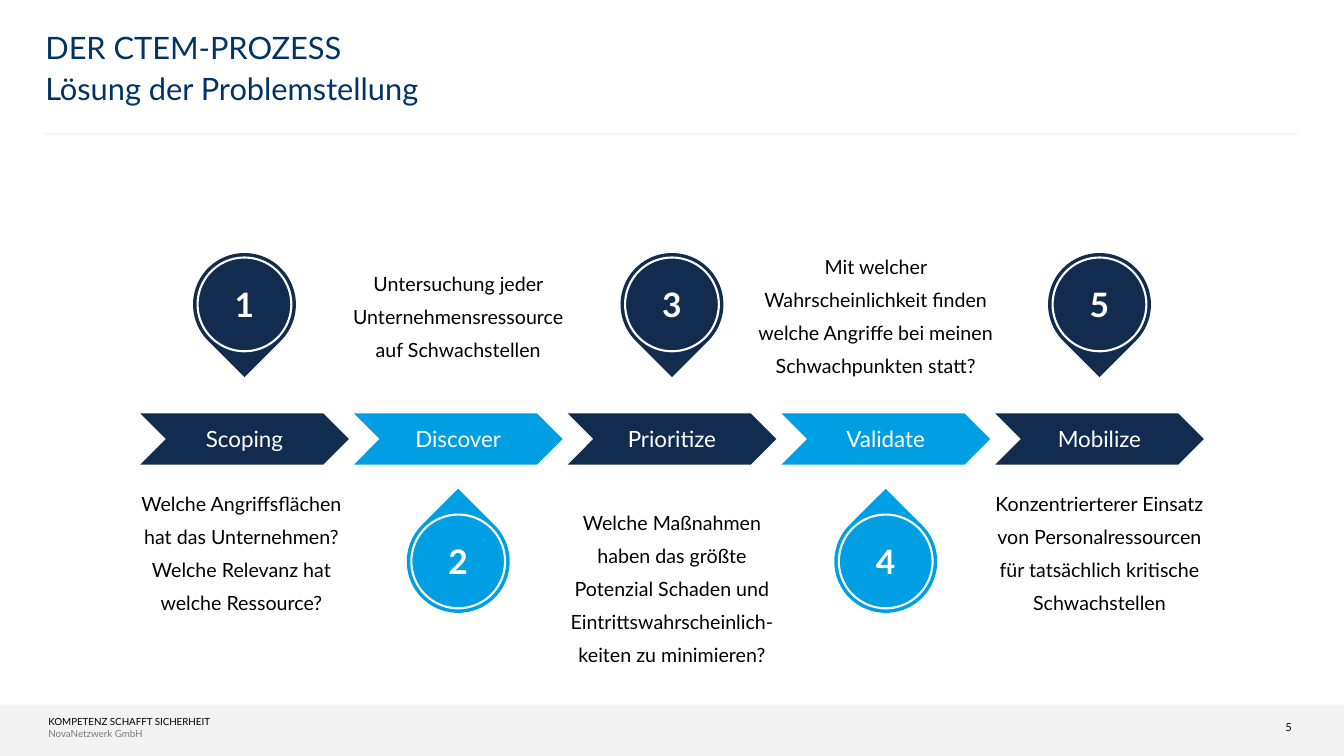
import pptx
import pptx.util
import pptx.dml.color
import pptx.enum.shapes
import pptx.enum.text
import pptx.oxml.ns
import lxml.etree

Inches = pptx.util.Inches
Pt = pptx.util.Pt
RGBColor = pptx.dml.color.RGBColor
MSO_SHAPE = pptx.enum.shapes.MSO_SHAPE
PP_ALIGN = pptx.enum.text.PP_ALIGN
MSO_ANCHOR = pptx.enum.text.MSO_ANCHOR
MSO_AUTO_SIZE = pptx.enum.text.MSO_AUTO_SIZE
qn = pptx.oxml.ns.qn

NAVY = RGBColor(0x12, 0x2C, 0x50)
CYAN = RGBColor(0x00, 0x9F, 0xE3)
TITLE_BLUE = RGBColor(0x00, 0x33, 0x66)
WHITE = RGBColor(0xFF, 0xFF, 0xFF)
BLACK = RGBColor(0x00, 0x00, 0x00)
NEAR_BLACK = RGBColor(0x0D, 0x0D, 0x0D)
GRAY = RGBColor(0x7C, 0x7B, 0x7B)
FOOTER_GRAY = RGBColor(0xF2, 0xF2, 0xF2)

FONT = "Lato"
SLIDE_W, SLIDE_H = 13.33, 7.5
MARGIN = 0.45
CHEVRON_W, CHEVRON_H, CHEVRON_TOP = 2.07, 0.51, 4.1
PITCH = CHEVRON_W + 0.05
PIN, RING = 1.02, 0.93
PIN_TOP_ABOVE, PIN_TOP_BELOW = 2.51, 5.06

# label, question, text shift, text top, text width, text height
STEPS = [
    ("Scoping", "Welche Angriffsflächen hat das Unternehmen? Welche Relevanz hat welche Ressource?",
     -0.03, 4.74, 2.39, 1.39),
    ("Discover", "Untersuchung jeder Unternehmensressource auf Schwachstellen",
     0, 2.56, 2.39, 1.06),
    ("Prioritize", "Welche Maßnahmen haben das größte Potenzial Schaden und "
     "Eintrittswahrscheinlich-keiten zu minimieren?", 0, 4.93, 2.39, 1.72),
    ("Validate", "Mit welcher Wahrscheinlichkeit finden welche Angriffe bei meinen "
     "Schwachpunkten statt?", -0.1, 2.39, 2.59, 1.39),
    ("Mobilize", "Konzentrierterer Einsatz von Personalressourcen für tatsächlich kritische "
     "Schwachstellen", 0, 4.74, 2.39, 1.39),
]


def box(left, top, width, height):
    return [Inches(v) for v in (left, top, width, height)]


def write(sp, *lines, size, colors, bold=False, align=PP_ALIGN.LEFT,
          anchor=MSO_ANCHOR.TOP, spacing=None, before=0, insets=(0, 0, 0, 0)):
    tf = sp.text_frame
    tf.word_wrap = True
    tf.auto_size = MSO_AUTO_SIZE.NONE
    tf.vertical_anchor = anchor
    tf.margin_left, tf.margin_top, tf.margin_right, tf.margin_bottom = map(Inches, insets)
    for i, (line, color) in enumerate(zip(lines, colors)):
        p = tf.add_paragraph() if i else tf.paragraphs[0]
        p.alignment = align
        if spacing:
            p.line_spacing = spacing
        if i and before:
            p.space_before = Pt(before)
        r = p.add_run()
        r.text = line
        r.font.name = FONT
        r.font.size = Pt(size)
        r.font.bold = bold
        r.font.color.rgb = color


def add_filled(shapes, kind, place, fill, outline=None):
    sp = shapes.add_shape(kind, *box(*place))
    sp.shadow.inherit = False
    sp.fill.solid()
    sp.fill.fore_color.rgb = fill
    if outline:
        sp.line.color.rgb = outline
        sp.line.width = Pt(1.5)
    else:
        sp.line.fill.background()
    return sp


def add_text(s, place, *lines, **fmt):
    sp = s.shapes.add_textbox(*box(*place))
    write(sp, *lines, **fmt)
    return sp


def add_divider(s, y):
    line = s.shapes.add_connector(pptx.enum.shapes.MSO_CONNECTOR.STRAIGHT,
                                  Inches(0.44), Inches(y), Inches(12.87), Inches(y))
    line.line.color.rgb = BLACK
    line.line.width = Pt(0.25)
    rgb = line.line._ln.find(".//" + qn("a:srgbClr"))
    lxml.etree.SubElement(rgb, qn("a:alpha"), val="35000")
    lxml.etree.SubElement(line._element.spPr, qn("a:effectLst"))


def add_header(s):
    title = s.shapes.title
    title.left, title.top, title.width, title.height = box(MARGIN, 0.33, 8.33, 0.4)
    write(title, "DER CTEM-PROZESS", size=22, colors=[TITLE_BLUE], spacing=0.9)
    add_text(s, (MARGIN, 0.69, 8.33, 0.47), "Lösung der Problemstellung",
             size=22, colors=[TITLE_BLUE])
    add_divider(s, 1.33)


def add_footer(s):
    add_filled(s.shapes, MSO_SHAPE.RECTANGLE,
               (0, SLIDE_H - 0.51, SLIDE_W, 0.51), FOOTER_GRAY)
    add_text(s, (12.69, 7.15, 0.18, 0.12), "5", size=8, colors=[NEAR_BLACK],
             align=PP_ALIGN.CENTER)
    add_text(s, (0.44, 7.1, 2.67, 0.18), "KOMPETENZ SCHAFFT SICHERHEIT",
             "NovaNetzwerk GmbH", size=7, colors=[BLACK, GRAY], before=0.5,
             insets=(0.04, 0, 0.04, 0))


def add_pin(s, number, center, top, color, rotation):
    group = s.shapes.add_group_shape()
    drop = add_filled(group.shapes, MSO_SHAPE.TEAR, (center - PIN / 2, top, PIN, PIN), color)
    drop.rotation = rotation
    ring = add_filled(group.shapes, MSO_SHAPE.OVAL,
                      (center - RING / 2, top + (PIN - RING) / 2, RING, RING), color, WHITE)
    write(ring, str(number), size=24, colors=[WHITE], bold=True,
          align=PP_ALIGN.CENTER, anchor=MSO_ANCHOR.MIDDLE)


def add_step(s, index, label, question, shift, top, width, height):
    center = SLIDE_W / 2 + (index - 2) * PITCH
    pin_above = index % 2 == 0
    color = NAVY if pin_above else CYAN
    chevron = add_filled(s.shapes, MSO_SHAPE.CHEVRON,
                         (center - CHEVRON_W / 2, CHEVRON_TOP, CHEVRON_W, CHEVRON_H), color)
    write(chevron, label, size=16, colors=[WHITE], align=PP_ALIGN.CENTER,
          anchor=MSO_ANCHOR.MIDDLE)
    add_pin(s, index + 1, center, PIN_TOP_ABOVE if pin_above else PIN_TOP_BELOW,
            color, 135 if pin_above else 315)
    sp = add_text(s, (center + shift - width / 2, top, width, height), question,
                  size=14, colors=[BLACK], align=PP_ALIGN.CENTER, spacing=1.4,
                  insets=(0.1, 0.05, 0.1, 0.05))
    sp.text_frame.auto_size = MSO_AUTO_SIZE.SHAPE_TO_FIT_TEXT


def main():
    prs = pptx.Presentation()
    prs.slide_width, prs.slide_height = Inches(SLIDE_W), Inches(SLIDE_H)
    s = prs.slides.add_slide(prs.slide_layouts[5])
    add_footer(s)
    add_header(s)
    for i, step in enumerate(STEPS):
        add_step(s, i, *step)
    prs.save("out.pptx")


if __name__ == "__main__":
    main()
